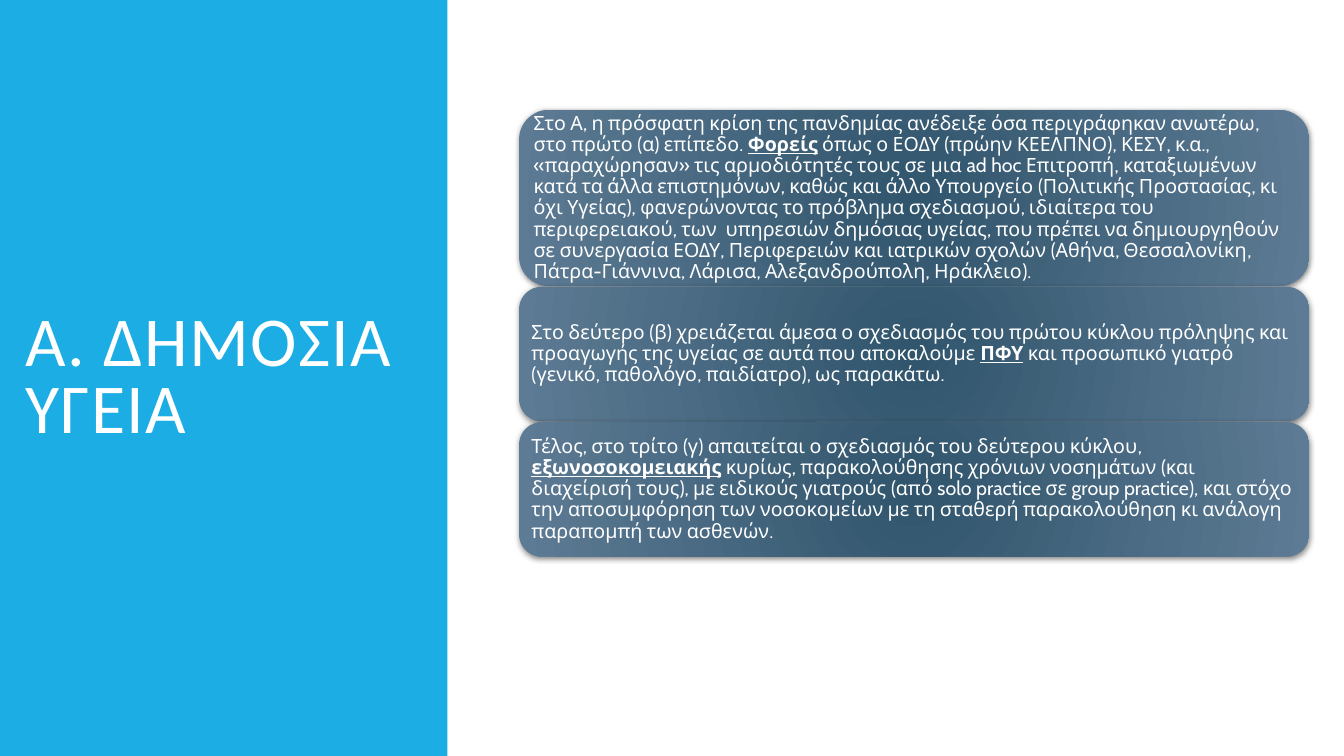
from pptx import Presentation
from pptx.dml.color import RGBColor
from pptx.enum.shapes import MSO_SHAPE
from pptx.enum.text import MSO_ANCHOR, MSO_AUTO_SIZE, PP_ALIGN
from pptx.oxml import parse_xml
from pptx.oxml.ns import nsdecls, qn
from pptx.util import Pt

RECTANGLE = MSO_SHAPE.RECTANGLE
ROUNDED = MSO_SHAPE.ROUNDED_RECTANGLE
MIDDLE = MSO_ANCHOR.MIDDLE
LEFT = PP_ALIGN.LEFT
NO_FIT = MSO_AUTO_SIZE.NONE
TITLE_ONLY = 5

COLORS = {
    "panel": "1CADE4",
    "card_center": "30556C",
    "card_edge": "5D7B94",
    "text": "FFFFFF",
    "shadow": "000000",
}

CARD_LEFT, CARD_TOP, CARD_WIDTH, CARD_GAP = 370.8, 78.6, 564.5, 0.7
CARDS = [
    (125.6, "Στο Α, η πρόσφατη κρίση της πανδημίας ανέδειξε όσα περιγράφηκαν ανωτέρω, "
            "στο πρώτο (α) επίπεδο. ",
     "Φορείς",
     " όπως ο ΕΟΔΥ (πρώην ΚΕΕΛΠΝΟ), ΚΕΣΥ, κ.α., «παραχώρησαν» τις αρμοδιότητές τους "
     "σε μια ad hoc Επιτροπή, καταξιωμένων κατά τα άλλα επιστημόνων, καθώς και άλλο "
     "Υπουργείο (Πολιτικής Προστασίας, κι όχι Υγείας), φανερώνοντας το πρόβλημα "
     "σχεδιασμού, ιδιαίτερα του περιφερειακού, των  υπηρεσιών δημόσιας υγείας, που "
     "πρέπει να δημιουργηθούν σε συνεργασία ΕΟΔΥ, Περιφερειών και ιατρικών σχολών "
     "(Αθήνα, Θεσσαλονίκη, Πάτρα-Γιάννινα, Λάρισα, Αλεξανδρούπολη, Ηράκλειο)."),
    (96, "Στο δεύτερο (β) χρειάζεται άμεσα ο σχεδιασμός του πρώτου κύκλου πρόληψης και "
         "προαγωγής της υγείας σε αυτά που αποκαλούμε ",
     "ΠΦΥ",
     " και προσωπικό γιατρό (γενικό, παθολόγο, παιδίατρο), ως παρακάτω."),
    (96, "Τέλος, στο τρίτο (γ) απαιτείται ο σχεδιασμός του δεύτερου κύκλου, ",
     "εξωνοσοκομειακής",
     " κυρίως, παρακολούθησης χρόνιων νοσημάτων (και διαχείρισή τους), με ειδικούς "
     "γιατρούς (από solo practice σε group practice), και στόχο την αποσυμφόρηση των "
     "νοσοκομείων με τη σταθερή παρακολούθηση κι ανάλογη παραπομπή των ασθενών."),
]


def color(name):
    return RGBColor.from_string(COLORS[name])


def format_paragraph(paragraph, font_name, size, line_spacing):
    paragraph.alignment = LEFT
    paragraph.line_spacing = line_spacing
    paragraph.font.name = font_name
    paragraph.font.size = Pt(size)
    paragraph.font.color.rgb = color("text")


def add_panel(slide):
    panel = slide.shapes.add_shape(RECTANGLE, 0, 0, Pt(319.7), Pt(540))
    panel.shadow.inherit = False
    panel.fill.solid()
    panel.fill.fore_color.rgb = color("panel")
    panel.line.fill.background()
    slide.shapes._spTree.insert(2, panel._element)


def set_title(slide, text):
    title = slide.shapes.title
    title.left, title.top, title.width, title.height = Pt(10.8), Pt(50.4), Pt(308.9), Pt(442)
    frame = title.text_frame
    frame.text = text
    frame.word_wrap = True
    frame.auto_size = NO_FIT
    frame.vertical_anchor = MIDDLE
    paragraph = frame.paragraphs[0]
    format_paragraph(paragraph, "Calibri", 50, 0.8)
    paragraph.runs[0]._r.get_or_add_rPr().set("spc", "100")


def style_card(card):
    gradient = parse_xml(
        f'<a:gradFill {nsdecls("a")} rotWithShape="1"><a:gsLst>'
        f'<a:gs pos="0"><a:srgbClr val="{COLORS["card_center"]}"/></a:gs>'
        f'<a:gs pos="100000"><a:srgbClr val="{COLORS["card_edge"]}"/></a:gs></a:gsLst>'
        '<a:path path="circle"><a:fillToRect l="100000" t="100000" r="100000" b="100000"/>'
        '</a:path></a:gradFill>')
    shadow = parse_xml(
        f'<a:outerShdw {nsdecls("a")} blurRad="{Pt(4)}" dist="{Pt(1)}" dir="5400000" '
        f'rotWithShape="0"><a:srgbClr val="{COLORS["shadow"]}"><a:alpha val="50000"/>'
        '</a:srgbClr></a:outerShdw>')
    card.line.fill.background()
    card.shadow.inherit = False
    properties = card._element.spPr
    properties.find(qn("a:prstGeom")).addnext(gradient)
    properties.find(qn("a:effectLst")).append(shadow)


def add_card(slide, top, height, before, emphasis, after):
    card = slide.shapes.add_shape(ROUNDED, Pt(CARD_LEFT), Pt(top), Pt(CARD_WIDTH), Pt(height))
    style_card(card)
    frame = card.text_frame
    frame.word_wrap = True
    frame.vertical_anchor = MIDDLE
    frame.margin_left = frame.margin_right = Pt(4.2)
    frame.margin_top = frame.margin_bottom = Pt(4.2)
    paragraph = frame.paragraphs[0]
    for text in (before, emphasis, after):
        run = paragraph.add_run()
        run.text = text
        if text == emphasis:
            run.font.bold = True
            run.font.underline = True
    format_paragraph(paragraph, "Cabin", 14, 0.9)


def main():
    presentation = Presentation()
    presentation.slide_width = Pt(960)
    presentation.slide_height = Pt(540)
    slide = presentation.slides.add_slide(presentation.slide_layouts[TITLE_ONLY])
    add_panel(slide)
    set_title(slide, "Α. ΔΗΜΟΣΙΑ ΥΓΕΙΑ")
    top = CARD_TOP
    for height, before, emphasis, after in CARDS:
        add_card(slide, top, height, before, emphasis, after)
        top += height + CARD_GAP
    presentation.save("out.pptx")


if __name__ == "__main__":
    main()
